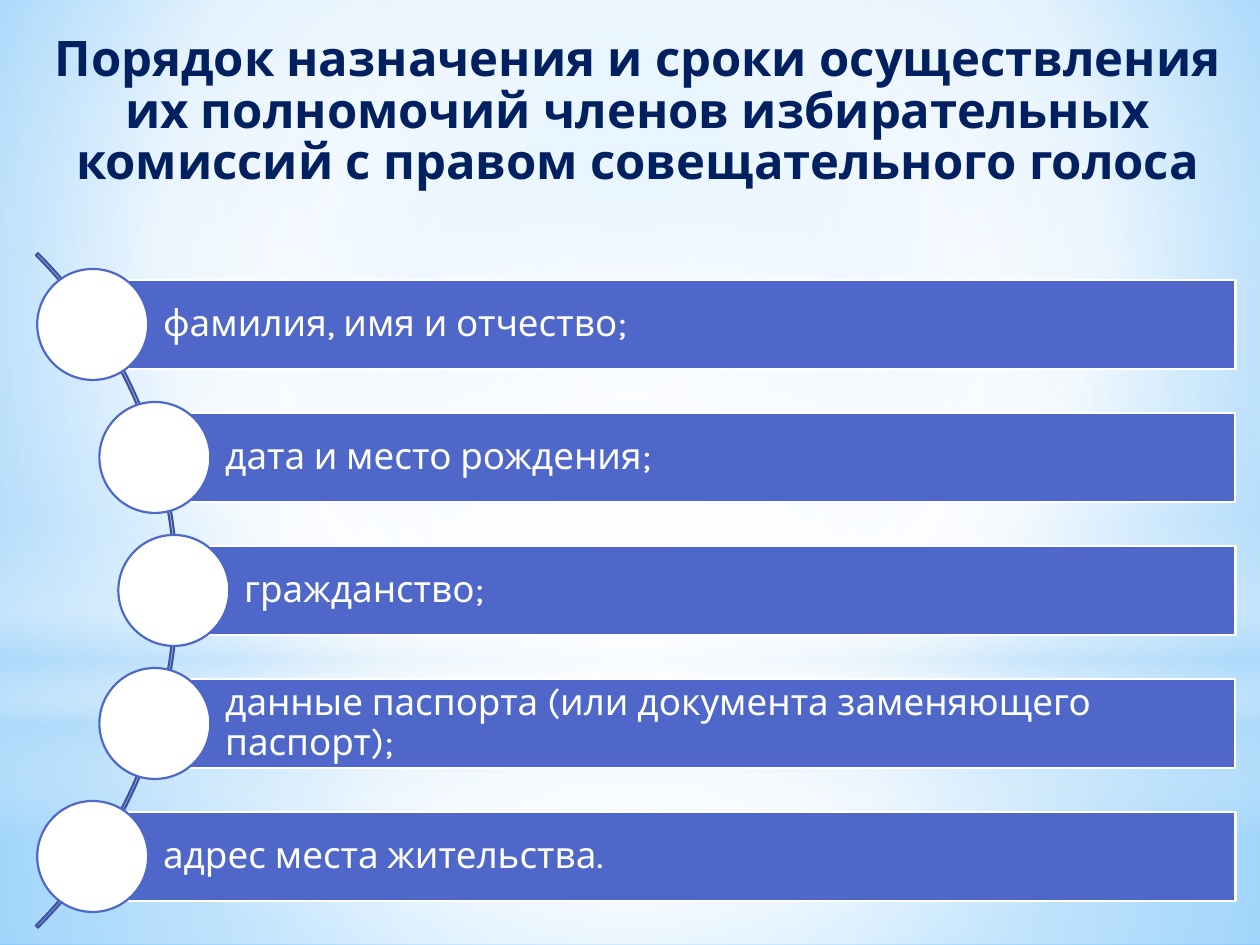
import math

import pptx
import pptx.dml.color
import pptx.enum.shapes
import pptx.enum.text
import pptx.oxml
import pptx.oxml.ns
import pptx.util

Pt = pptx.util.Pt
RGBColor = pptx.dml.color.RGBColor
Shape = pptx.enum.shapes.MSO_SHAPE
Align = pptx.enum.text.PP_ALIGN
Anchor = pptx.enum.text.MSO_ANCHOR

WHITE = RGBColor(0xFF, 0xFF, 0xFF)
SKY = RGBColor(0x9E, 0xD5, 0xFF)
DEEP_SKY = RGBColor(0x5B, 0xB9, 0xFF)
PALE_BLUE = RGBColor(0xB4, 0xDC, 0xFA)
NAVY = RGBColor(0x00, 0x20, 0x60)
INDIGO = RGBColor(0x4E, 0x67, 0xC8)
DARK_INDIGO = RGBColor(0x3E, 0x52, 0xA0)

FONT = "Karla"
WIDTH, HEIGHT = 720, 540
LINE = 1.25

ARC_X, ARC_Y, ARC_RADIUS = -171, 337.4, 272.5
DOT_INSET = 2.2
ROW_PITCH = 76
BAR_RIGHT, BAR_HEIGHT = 706, 50.6
DOT_SIZE = 63.4

TITLE = ("Порядок назначения и сроки осуществления их полномочий членов "
         "избирательных комиссий с правом совещательного голоса")
ITEMS = [
    "фамилия, имя и отчество;",
    "дата и место рождения;",
    "гражданство;",
    "данные паспорта (или документа заменяющего паспорт);",
    "адрес места жительства.",
]

CENTRE = (50, 50, 50, 50)
LAYERS = [
    (Shape.RECTANGLE, (0, 402, WIDTH, 138),
     [(0, WHITE, 91), (37, WHITE, 76), (100, PALE_BLUE, 79)], CENTRE),
    (Shape.RECTANGLE, (0, 0, WIDTH, 402),
     [(0, WHITE, 89), (48, WHITE, 62), (100, PALE_BLUE, 79)], CENTRE),
    (Shape.RECTANGLE, (0, 296.6, WIDTH, 180),
     [(0, WHITE, 0), (29, WHITE, 30), (45, PALE_BLUE, 40),
      (55, WHITE, 26), (65, PALE_BLUE, 60), (100, WHITE, 0)], None),
    (Shape.OVAL, (0, 126, WIDTH, 402),
     [(0, WHITE, 100), (56, WHITE, 0)], CENTRE),
]


def gradient(stops, focus=None):
    marks = "".join(
        f'<a:gs pos="{place * 1000}"><a:srgbClr val="{colour}">'
        f'<a:alpha val="{opacity * 1000}"/></a:srgbClr></a:gs>'
        for place, colour, opacity in stops)
    if focus:
        sides = " ".join(f'{side}="{value * 1000}"'
                         for side, value in zip("ltrb", focus))
        shade = f'<a:path path="circle"><a:fillToRect {sides}/></a:path>'
    else:
        shade = '<a:lin ang="5400000" scaled="0"/>'
    return pptx.oxml.parse_xml(
        f'<a:gradFill {pptx.oxml.ns.nsdecls("a")} rotWithShape="1">'
        f'<a:gsLst>{marks}</a:gsLst>{shade}</a:gradFill>')


def add_figure(page, kind, frame, fill=None, line=None):
    figure = page.shapes.add_shape(kind, *map(Pt, frame))
    figure.shadow.inherit = False
    if fill is None:
        figure.fill.background()
    else:
        figure.fill.solid()
        figure.fill.fore_color.rgb = fill
    if line is None:
        figure.line.fill.background()
    else:
        figure.line.color.rgb = line
        figure.line.width = Pt(LINE)
    return figure


def swap_fill(holder, tag, new_fill):
    old_fill = holder.find(pptx.oxml.ns.qn(tag))
    holder.replace(old_fill, new_fill)


def paint_background(page):
    page.background.fill.solid()
    holder = page.background.fill.fore_color
    holder.rgb = WHITE
    properties = page.element.find(".//" + pptx.oxml.ns.qn("p:bgPr"))
    stops = [(0, SKY, 100), (60, WHITE, 100), (100, DEEP_SKY, 100)]
    swap_fill(properties, "a:solidFill", gradient(stops, (20, 10, 20, 60)))
    for kind, frame, stops, focus in LAYERS:
        layer = add_figure(page, kind, frame)
        swap_fill(layer.element.spPr, "a:noFill", gradient(stops, focus))


def write_text(box, text, *, size, colour, bold=False, align=Align.LEFT,
               anchor=Anchor.MIDDLE, spacing=0.9, insets=(0, 0, 0, 0)):
    frame = box.text_frame
    frame.word_wrap = True
    frame.auto_size = pptx.enum.text.MSO_AUTO_SIZE.NONE
    frame.vertical_anchor = anchor
    (frame.margin_left, frame.margin_top,
     frame.margin_right, frame.margin_bottom) = map(Pt, insets)
    para = frame.paragraphs[0]
    para.alignment = align
    para.line_spacing = spacing
    span = para.add_run()
    span.text = text
    span.font.name = FONT
    span.font.size = Pt(size)
    span.font.bold = bold
    span.font.color.rgb = colour


def place_title(page):
    title = page.shapes.title
    page.shapes.element.append(title.element)
    title.left, title.top, title.width, title.height = map(
        Pt, (8.6, 15, 711.4, 90))
    write_text(title, TITLE, size=28, colour=NAVY, bold=True,
               align=Align.CENTER, anchor=Anchor.TOP, spacing=0.88,
               insets=(7.2, 5, 7.2, 3.6))


def add_arc(page):
    size = 2 * ARC_RADIUS
    arc = add_figure(page, Shape.BLOCK_ARC,
                     (ARC_X - ARC_RADIUS, ARC_Y - ARC_RADIUS, size, size),
                     line=DARK_INDIGO)
    for index, value in enumerate((189, 27, 0.003)):
        arc.adjustments[index] = value


def add_row(page, index, text):
    offset = (index - (len(ITEMS) - 1) / 2) * ROW_PITCH
    x = ARC_X + math.sqrt(ARC_RADIUS ** 2 - offset ** 2) - DOT_INSET
    y = ARC_Y + offset
    bar = add_figure(page, Shape.RECTANGLE,
                     (x, y - BAR_HEIGHT / 2, BAR_RIGHT - x, BAR_HEIGHT),
                     fill=INDIGO, line=WHITE)
    write_text(bar, text, size=21, colour=WHITE, insets=(40.2, 4.2, 4.2, 4.2))
    add_figure(page, Shape.OVAL,
               (x - DOT_SIZE / 2, y - DOT_SIZE / 2, DOT_SIZE, DOT_SIZE),
               fill=WHITE, line=INDIGO)


def main():
    deck = pptx.Presentation()
    deck.slide_width, deck.slide_height = Pt(WIDTH), Pt(HEIGHT)
    page = deck.slides.add_slide(deck.slide_layouts[5])
    paint_background(page)
    place_title(page)
    add_arc(page)
    for index, text in enumerate(ITEMS):
        add_row(page, index, text)
    deck.save("out.pptx")


if __name__ == "__main__":
    main()
